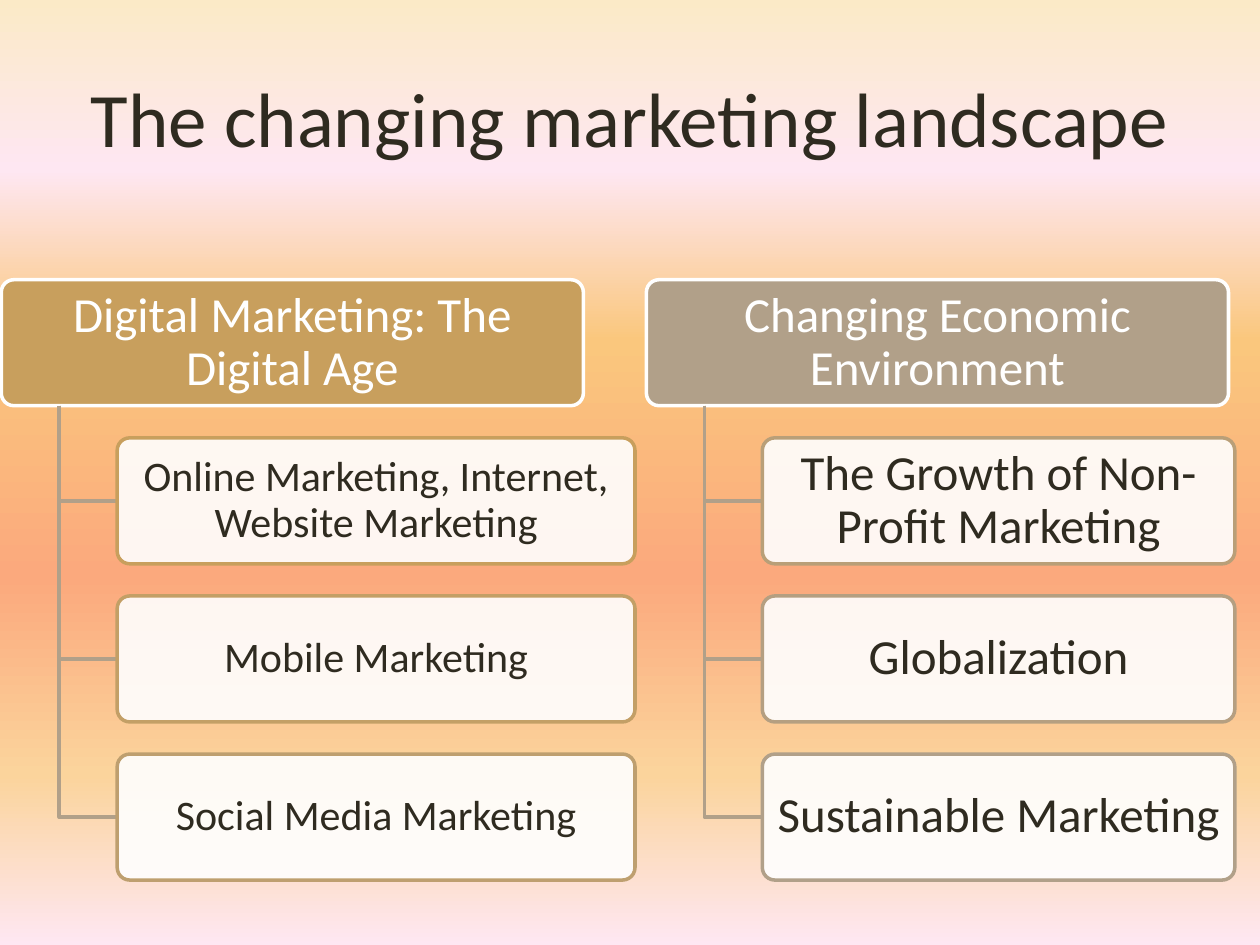
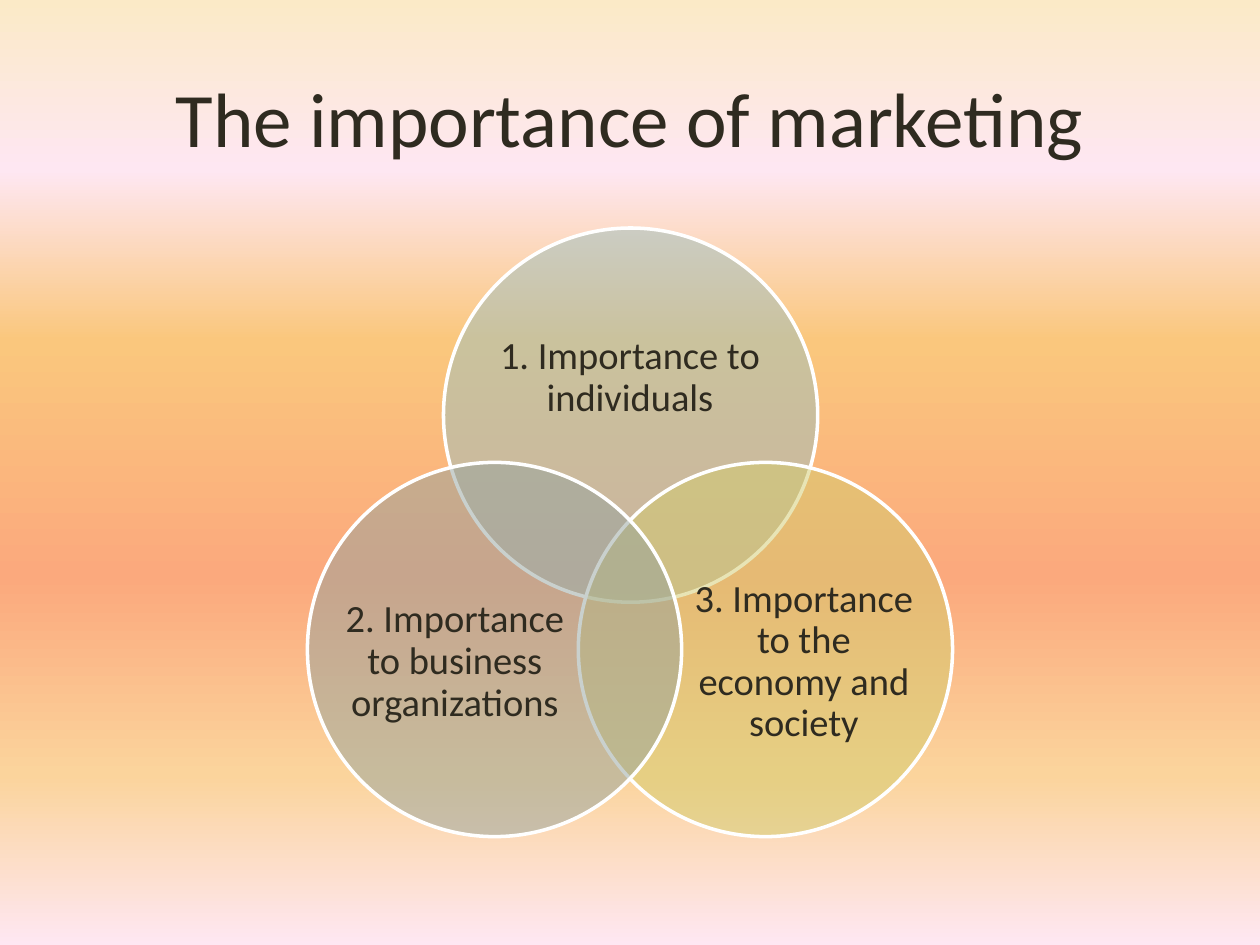
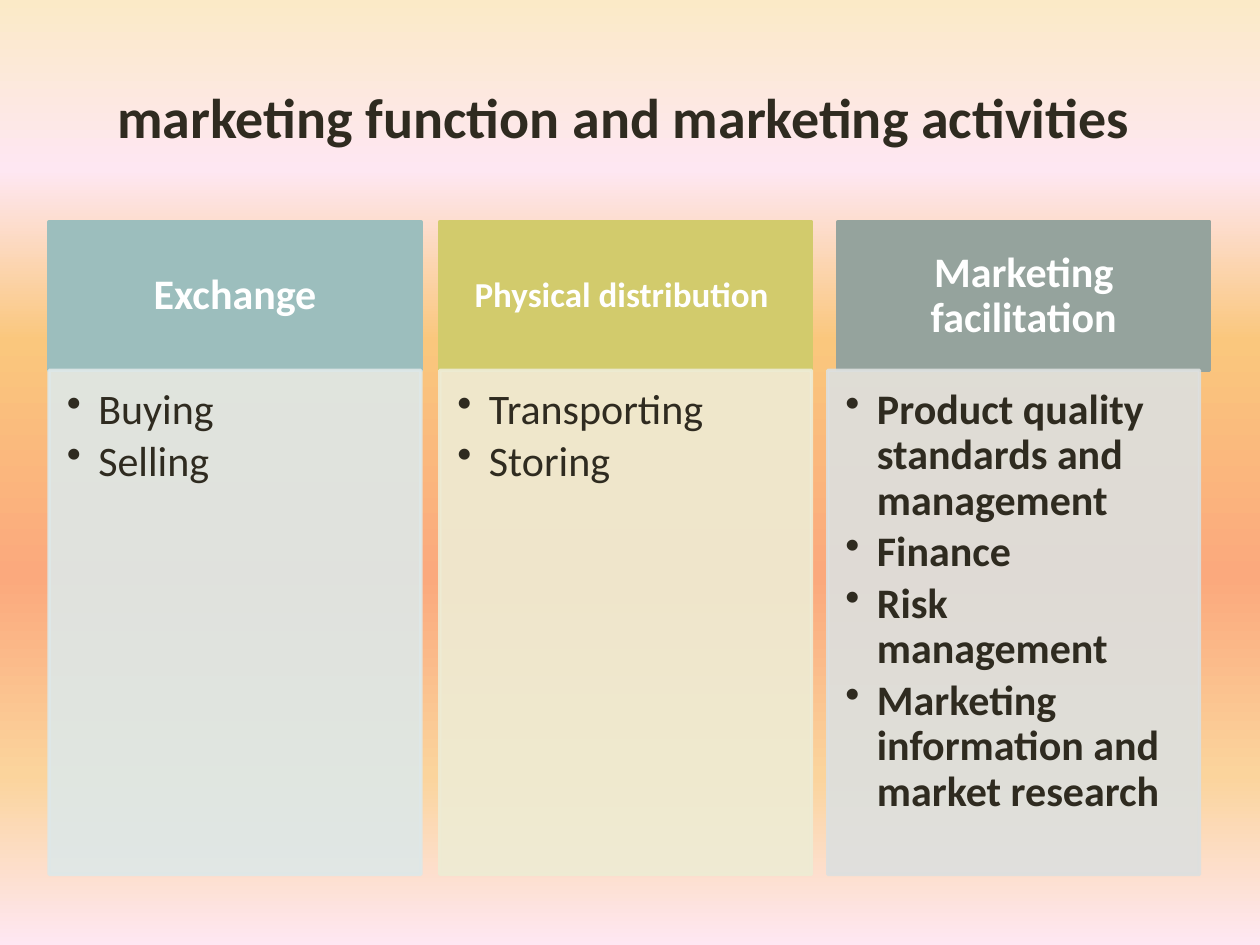
from lxml import etree
from pptx import Presentation
from pptx import util as u
from pptx.dml.color import RGBColor
from pptx.enum import shapes, text
from pptx.oxml.ns import qn

FONT = "Calibri"
HUES = {
    "ink": "2F2B20", "white": "FFFFFF", "gold": "C89F5D", "taupe": "B1A089",
    "teal": "9CBEBD", "lime": "D2CB6C", "sage": "95A39D",
    "mist": "DEE8E8", "cream": "EEECD4", "fog": "DDE0DF",
}
SKY = [(0, "FBEAC7"), (18, "FEE7F2"), (36, "FAC77D"),
       (61, "FBA97D"), (82, "FBD49C"), (100, "FEE7F2")]
KIND = shapes.MSO_SHAPE


def rgb(hue):
    return RGBColor.from_string(HUES.get(hue, hue))


def paint(fill, hue, alpha=100):
    """Solid fill, see-through when alpha is below 100."""
    fill.solid()
    fill.fore_color.rgb = rgb(hue)
    if alpha < 100:
        color = fill._xPr.find(".//" + qn("a:srgbClr"))
        etree.SubElement(color, qn("a:alpha"), val=str(alpha * 1000))


def style(para, size, hue="ink", bold=False):
    font = para.font
    font.name, font.size, font.bold = FONT, u.Pt(size), bold
    font.color.rgb = rgb(hue)


def write(shape, lines, size, hue="ink", bold=False, pad=(0, 0, 0, 0), bullet=False):
    """Centred label, or a bulleted list from the top."""
    frame = shape.text_frame
    frame.word_wrap = True
    frame.vertical_anchor = text.MSO_ANCHOR.TOP if bullet else text.MSO_ANCHOR.MIDDLE
    (frame.margin_left, frame.margin_top,
     frame.margin_right, frame.margin_bottom) = map(u.Inches, pad)
    for i, line in enumerate(lines):
        para = frame.paragraphs[0] if i == 0 else frame.add_paragraph()
        para.text = line
        para.line_spacing = 0.9
        para.alignment = text.PP_ALIGN.LEFT if bullet else text.PP_ALIGN.CENTER
        if bullet:
            para.space_after = u.Pt(3.6)
            props = para._p.get_or_add_pPr()
            props.set("marL", str(u.Inches(0.25)))
            props.set("indent", str(u.Inches(-0.25)))
            etree.SubElement(props, qn("a:buChar"), char="•")
        style(para, size, hue, bold)


def block(slide, kind, at, fill, edge, alpha=100, fade=100):
    shape = slide.shapes.add_shape(kind, *map(u.Inches, at))
    shape.shadow.inherit = False
    paint(shape.fill, fill, alpha)
    paint(shape.line.fill, edge, fade)
    shape.line.width = u.Pt(2)
    return shape


def card(slide, at, fill, edge, alpha=100):
    shape = block(slide, KIND.ROUNDED_RECTANGLE, at, fill, edge, alpha)
    shape.adjustments[0] = 0.1
    return shape


def elbow(slide, x, top, end, reach):
    """Line down from a heading, then right to a card."""
    pen = slide.shapes.build_freeform(u.Inches(x), u.Inches(top))
    pen.add_line_segments([(u.Inches(x), u.Inches(end)),
                           (u.Inches(x + reach), u.Inches(end))], close=False)
    shape = pen.convert_to_shape()
    shape.shadow.inherit = False
    shape.fill.background()
    paint(shape.line.fill, "taupe")
    shape.line.width = u.Pt(2)


def backdrop(master):
    fill = master.background.fill
    fill.gradient()
    fill.gradient_angle = 270
    stops = master.element.find(".//" + qn("a:gsLst"))
    for stop in list(stops):
        stops.remove(stop)
    for pos, hue in SKY:
        stop = etree.SubElement(stops, qn("a:gs"), pos=str(pos * 1000))
        etree.SubElement(stop, qn("a:srgbClr"), val=hue)


def add_page(deck, words, size=44, bold=False):
    slide = deck.slides.add_slide(deck.slide_layouts[5])
    title = slide.shapes.title
    title.left, title.top, title.width, title.height = map(u.Inches, (0.5, 0.3, 9, 1.25))
    title.text_frame.text = words
    title.text_frame.vertical_anchor = text.MSO_ANCHOR.MIDDLE
    para = title.text_frame.paragraphs[0]
    para.alignment = text.PP_ALIGN.CENTER
    style(para, size, bold=bold)
    return slide


def branch(slide, x, head, hue, wide, size, leaves):
    """Heading with a stack of linked cards."""
    top, tall, step, inset = 2.22, 1, 1.255, 0.46
    pad = (0.06, 0.04, 0.06, 0.04)
    write(card(slide, (x, top, 4.62, tall), hue, "white"), [head], 28, "white", pad=pad)
    for i, (label, edge) in enumerate(leaves, 1):
        y = top + i * step
        elbow(slide, x + inset, top + tall, y + tall / 2, inset)
        leaf = card(slide, (x + 2 * inset, y, wide, tall), "white", edge, 90)
        write(leaf, [label], size, pad=pad)


def ring(slide, at, hue, label, box):
    block(slide, KIND.OVAL, (*at, 2.97, 2.97), hue, "white", 50)
    write(slide.shapes.add_textbox(*map(u.Inches, box)), [label], 22)


def column(slide, x, head, size, hue, left, tint, items, bold=False):
    top, wide, tall = 1.76, 2.95, 1.18
    band = block(slide, KIND.RECTANGLE, (x, top, wide, tall), hue, hue)
    write(band, [head], size, "white", True, (0.19, 0.11, 0.19, 0.11))
    body = block(slide, KIND.RECTANGLE, (left, top + tall, wide, 4), tint, tint, 90, 90)
    write(body, items, 24, bold=bold, pad=(0.14, 0.14, 0.19, 0.21), bullet=True)


def main():
    deck = Presentation()
    deck.slide_width, deck.slide_height = u.Inches(10), u.Inches(7.5)
    backdrop(deck.slide_master)

    # Landscape: two branches
    slide = add_page(deck, "The changing marketing landscape")
    branch(slide, 0.01, "Digital Marketing: The Digital Age", "gold", 4.11, 24, [
        ("Online Marketing, Internet, Website Marketing", "gold"),
        ("Mobile Marketing", "C39F66"),
        ("Social Media Marketing", "BE9F6F")])
    branch(slide, 5.13, "Changing Economic Environment", "taupe", 3.75, 28, [
        ("The Growth of Non-Profit Marketing", "B99F78"),
        ("Globalization", "B59F81"),
        ("Sustainable Marketing", "taupe")])

    # Importance: three overlapping rings
    slide = add_page(deck, "The importance of marketing")
    ring(slide, (3.52, 1.81), "teal", "1. Importance to individuals",
         (3.91, 2.33, 2.18, 1.34))
    ring(slide, (4.59, 3.67), "lime", "3. Importance to the economy and society",
         (5.49, 4.44, 1.78, 1.63))
    ring(slide, (2.44, 3.67), "sage", "2. Importance to business organizations",
         (2.72, 4.44, 1.78, 1.63))

    # Functions: three columns
    slide = add_page(deck, "marketing function and marketing activities ", 32, True)
    column(slide, 0.39, "Exchange", 24, "teal", 0.39, "mist", ["Buying", "Selling"])
    column(slide, 3.49, "Physical distribution ", 20, "lime", 3.49, "cream",
           ["Transporting", "Storing"])
    column(slide, 6.65, "Marketing facilitation", 24, "sage", 6.57, "fog",
           ["Product quality standards and management", "Finance",
            "Risk management", "Marketing information and market research"], True)

    deck.save("out.pptx")


if __name__ == "__main__":
    main()
